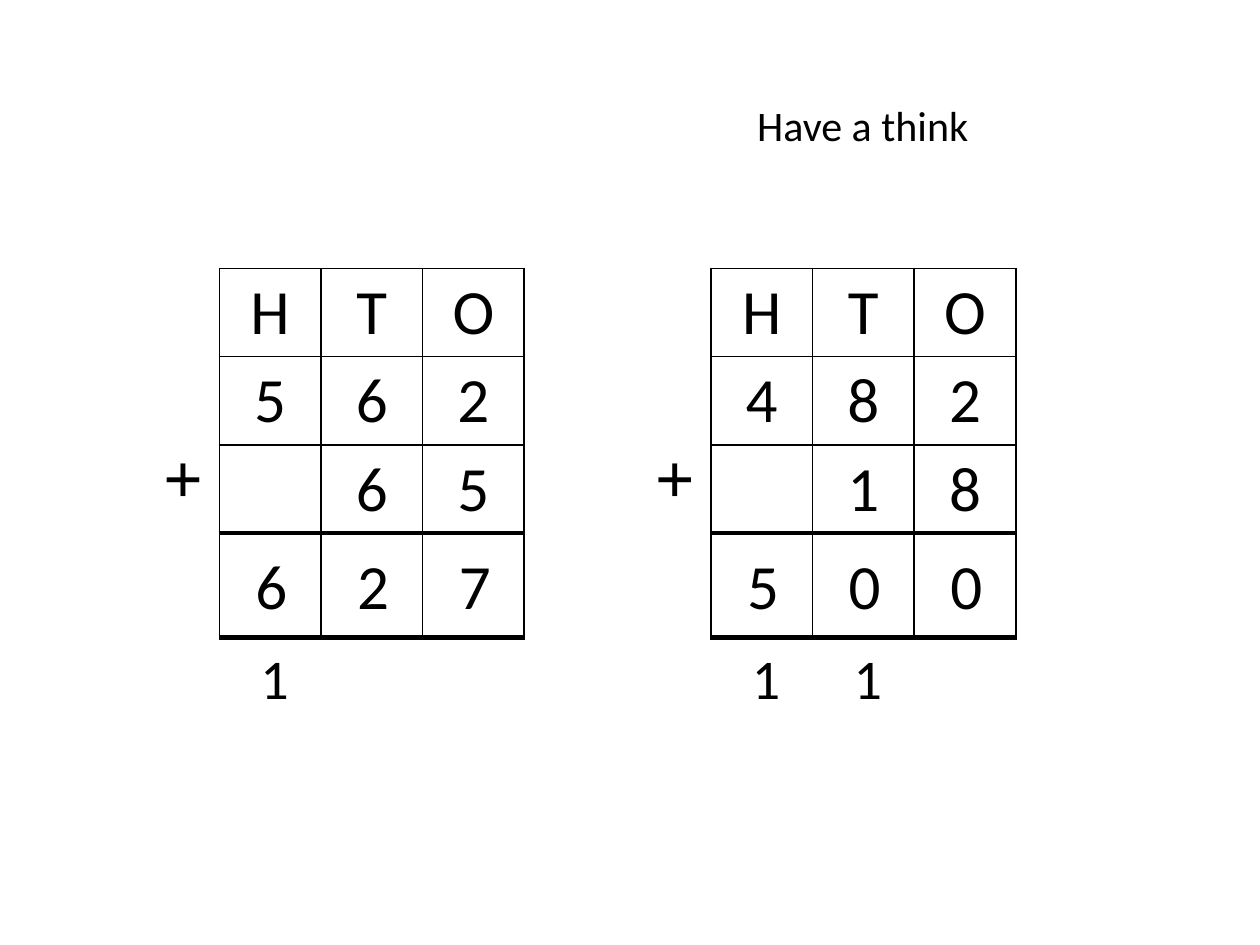
from dataclasses import dataclass

from lxml import etree
from pptx import Presentation
from pptx.dml.color import RGBColor
from pptx.enum.text import MSO_ANCHOR, MSO_AUTO_SIZE, PP_ALIGN
from pptx.oxml.ns import qn
from pptx.util import Cm, Pt

MIDDLE, TOP = MSO_ANCHOR.MIDDLE, MSO_ANCHOR.TOP
CENTER, LEFT = PP_ALIGN.CENTER, PP_ALIGN.LEFT
FIT_SHAPE = MSO_AUTO_SIZE.SHAPE_TO_FIT_TEXT


@dataclass(frozen=True)
class Theme:
    ink: RGBColor = RGBColor(0, 0, 0)
    paper: RGBColor = RGBColor(255, 255, 255)
    body_font: str = "Calibri"
    sign_font: str = "Times New Roman"
    title_size: int = 24
    digit_size: int = 36
    carry_size: int = 32
    sign_size: int = 40
    thin: int = 1
    thick: int = 3


THEME = Theme()
COLUMN_WIDTH = 2.05
ROW_HEIGHTS = (1.73, 1.73, 1.47, 2.11)
ANSWER_ROW = len(ROW_HEIGHTS) - 1


def style(paragraph, size, font=THEME.body_font, bold=False):
    paragraph.font.size = Pt(size)
    paragraph.font.name = font
    paragraph.font.bold = bold
    paragraph.font.color.rgb = THEME.ink


def add_mark(slide, text, left, top, width, height, size, **font):
    """Place one loose character beside or on the grid."""
    box = slide.shapes.add_textbox(Cm(left), Cm(top), Cm(width), Cm(height))
    frame = box.text_frame
    frame.word_wrap = False
    frame.auto_size = FIT_SHAPE
    frame.text = text
    style(frame.paragraphs[0], size, **font)


def set_borders(cell, top, bottom):
    properties = cell._tc.get_or_add_tcPr()
    widths = {"a:lnL": THEME.thin, "a:lnR": THEME.thin, "a:lnT": top, "a:lnB": bottom}
    for tag, width in widths.items():
        line = etree.SubElement(properties, qn(tag), w=str(Pt(width)))
        fill = etree.SubElement(line, qn("a:solidFill"))
        etree.SubElement(fill, qn("a:srgbClr"), val=str(THEME.ink))


def add_grid(slide, left, top, rows):
    columns = len(rows[0])
    table = slide.shapes.add_table(
        len(ROW_HEIGHTS), columns, Cm(left), Cm(top),
        Cm(COLUMN_WIDTH * columns), Cm(sum(ROW_HEIGHTS))).table
    table.first_row = table.horz_banding = False
    for column in table.columns:
        column.width = Cm(COLUMN_WIDTH)
    for r, height in enumerate(ROW_HEIGHTS):
        table.rows[r].height = Cm(height)
        # Thick rules enclose the answer row
        above = THEME.thick if r == ANSWER_ROW else THEME.thin
        below = THEME.thick if r >= ANSWER_ROW - 1 else THEME.thin
        for c in range(columns):
            cell = table.cell(r, c)
            set_borders(cell, above, below)
            cell.fill.solid()
            cell.fill.fore_color.rgb = THEME.paper
            cell.vertical_anchor = MIDDLE
            if r < ANSWER_ROW and rows[r][c].strip():
                cell.text = rows[r][c]
                paragraph = cell.text_frame.paragraphs[0]
                paragraph.alignment = CENTER
                style(paragraph, THEME.digit_size)


def add_column_addition(slide, left, top, addends, answer, carries):
    """Grid with plus sign, answer digits and carried digits below."""
    add_grid(slide, left, top, ("HTO", *addends))
    add_mark(slide, "+", left - 1.38, top + 3.2, 1.55, 1.96,
             THEME.sign_size, font=THEME.sign_font, bold=True)
    for c, digit in enumerate(answer):
        add_mark(slide, digit, left + 0.48 + c * COLUMN_WIDTH, top + 5.49,
                 1.17, 1.8, THEME.digit_size)
    for c, digit in enumerate(carries):
        add_mark(slide, digit, left + 0.58 + c * COLUMN_WIDTH, top + 7.44,
                 1.09, 1.63, THEME.carry_size)


def add_heading(slide, text, left, top, width, height):
    title = slide.shapes.title
    title.left, title.top = Cm(left), Cm(top)
    title.width, title.height = Cm(width), Cm(height)
    frame = title.text_frame
    frame.text = text
    frame.word_wrap = True
    frame.auto_size = FIT_SHAPE
    frame.vertical_anchor = TOP
    frame.paragraphs[0].alignment = LEFT
    style(frame.paragraphs[0], THEME.title_size)


def main():
    deck = Presentation()
    deck.slide_width, deck.slide_height = Cm(25.4), Cm(19.05)
    slide = deck.slides.add_slide(deck.slide_layouts[5])  # title only

    add_heading(slide, "Have a think", 15.01, 1.88, 5.82, 1.27)
    add_column_addition(slide, 4.42, 5.41, ("562", " 65"), "627", "1")
    add_column_addition(slide, 14.33, 5.41, ("482", " 18"), "500", "11")

    deck.save("out.pptx")


if __name__ == "__main__":
    main()
